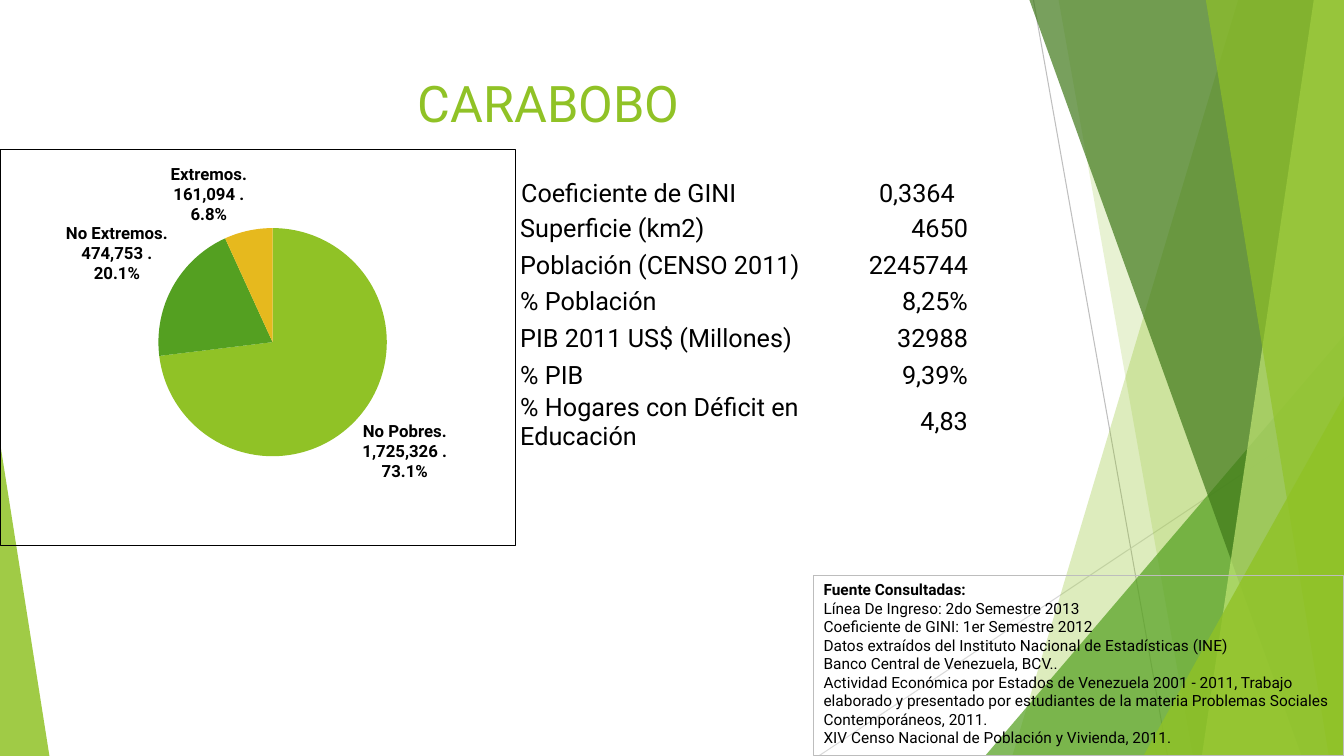
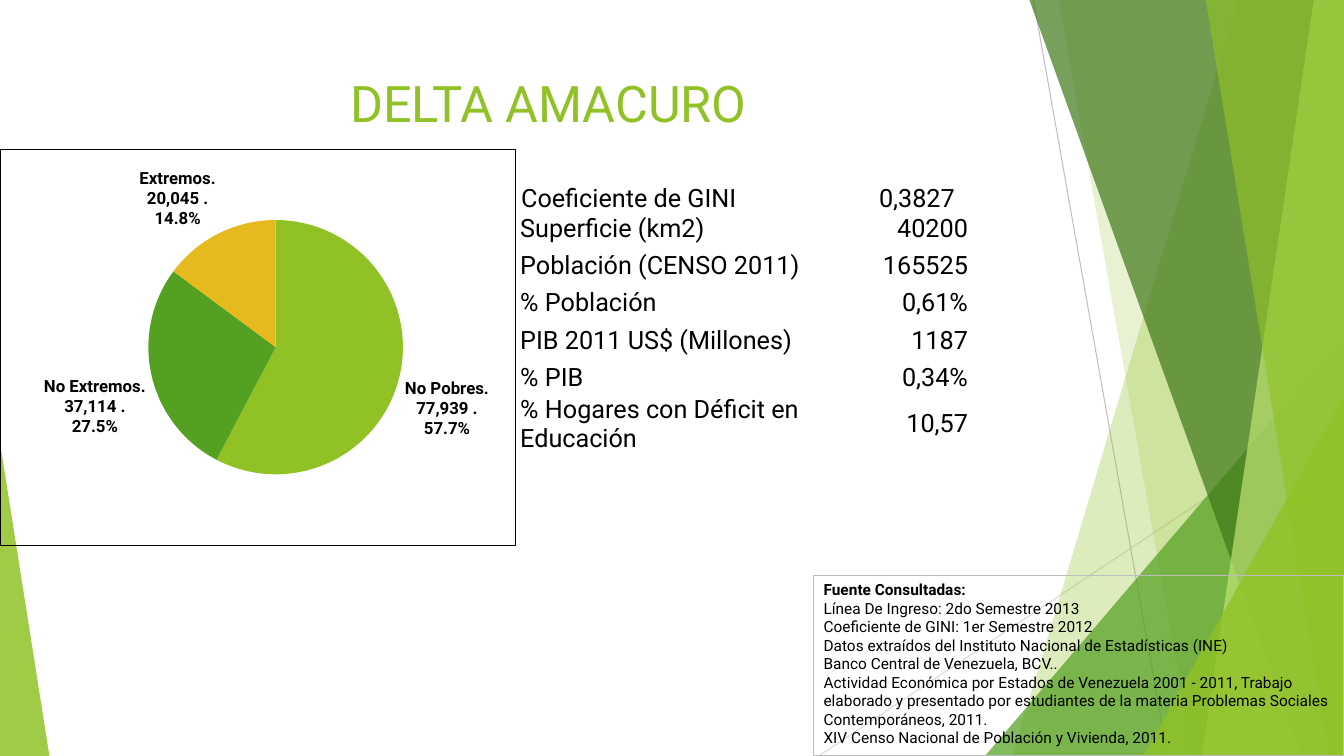
from pptx import Presentation
from pptx.chart.data import CategoryChartData
from pptx.dml.color import RGBColor
from pptx.enum.chart import XL_CHART_TYPE, XL_LABEL_POSITION
from pptx.enum.shapes import MSO_CONNECTOR, MSO_SHAPE
from pptx.enum.text import MSO_ANCHOR, PP_ALIGN
from pptx.oxml import parse_xml
from pptx.oxml.ns import nsdecls, qn
from pptx.util import Pt

EMU = 9144
WIDTH, HEIGHT = 1333, 750
FONT = "Roboto"
COLORS = {
    "lime": "90C226", "green": "54A021", "forest": "3F7819",
    "pale": "C0E474", "gold": "E6B91E", "black": "000000",
    "white": "FFFFFF", "gray": "BFBFBF", "silver": "D9D9D9",
    "frame": "BDBDBD",
}
CATEGORIES = ["No Pobres", "No Extremos", "Extremos"]
ROW_LABELS = [
    "Superficie (km2)", "Población (CENSO 2011)", "% Población",
    "PIB 2011 US$ (Millones)", "% PIB",
    "% Hogares con Déficit en Educación",
]
SOURCES = [
    "Fuente Consultadas:",
    "Línea De Ingreso: 2do Semestre 2013",
    "Coeficiente de GINI: 1er Semestre 2012",
    "Datos extraídos del Instituto Nacional de Estadísticas (INE)",
    "Banco Central de Venezuela, BCV..",
    "Actividad Económica por Estados de Venezuela 2001 - 2011, Trabajo "
    "elaborado y presentado por estudiantes de la materia Problemas "
    "Sociales Contemporáneos, 2011.",
    "XIV Censo Nacional de Población y Vivienda, 2011.",
]
LINES = [
    ((1025, 0), (1158, HEIGHT), "gray"),
    ((WIDTH, 403), (812, HEIGHT), "silver"),
]
FACETS = [
    ("band", (1228, 1004), "lime", 30),
    ("band", (1050, 1183), "lime", 20),
    ("triangle", (977, 333, 356, 417, 1), "green", 72),
    ("band", (1021, 1291), "forest", 70),
    ("band", (1303, 1192), "pale", 70),
    ("band", (1196, 1318), "lime", 65),
    ("triangle", (1134, 393, 199, 357, 1), "lime", 80),
    ("triangle", (0, 439, 49, 311, 0), "lime", 85),
]
STATES = [
    {"name": "CARABOBO", "gini": "0,3364", "gini_top": 171,
     "people": (1725326, 474753, 161094), "pie": (157, 78, 227),
     "tall_row": 42,
     "values": ["4650", "2245744", "8,25%", "32988", "9,39%", "4,83"]},
    {"name": "DELTA AMACURO", "gini": "0,3827", "gini_top": 176,
     "people": (77939, 37114, 20045), "pie": (147, 70, 253),
     "tall_row": 43,
     "values": ["40200", "165525", "0,61%", "1187", "0,34%", "10,57"]},
]


def rgb(name):
    return RGBColor.from_string(COLORS[name])


def px(*lengths):
    return [n * EMU for n in lengths]


class Deck:
    def __init__(self):
        self.prs = Presentation()
        self.prs.slide_width, self.prs.slide_height = px(WIDTH, HEIGHT)
        self.s = None

    def new_slide(self):
        self.s = self.prs.slides.add_slide(self.prs.slide_layouts[6])
        for start, end, color in LINES:
            self.line(start, end, color)
        for kind, geometry, color, opacity in FACETS:
            self.paint(getattr(self, kind)(*geometry), color, opacity)

    def line(self, start, end, color):
        cx = self.s.shapes.add_connector(MSO_CONNECTOR.STRAIGHT, *px(*start, *end))
        cx.line.color.rgb = rgb(color)
        cx.line.width = Pt(0.75)
        cx.element.spPr.append(parse_xml(f"<a:effectLst {nsdecls('a')}/>"))

    def band(self, top_x, bottom_x):
        fb = self.s.shapes.build_freeform(top_x, 0, scale=EMU)
        fb.add_line_segments([(WIDTH, 0), (WIDTH, HEIGHT), (bottom_x, HEIGHT)])
        return fb.convert_to_shape()

    def triangle(self, x, y, w, h, apex):
        sp = self.s.shapes.add_shape(MSO_SHAPE.ISOSCELES_TRIANGLE, *px(x, y, w, h))
        sp.adjustments[0] = apex
        return sp

    def paint(self, sp, color, opacity):
        sp.shadow.inherit = False
        sp.fill.solid()
        sp.fill.fore_color.rgb = rgb(color)
        sp.line.fill.background()
        clr = sp.element.spPr.find(".//" + qn("a:srgbClr"))
        clr.append(parse_xml(f'<a:alpha {nsdecls("a")} val="{opacity * 1000}"/>'))

    def style(self, p, size, color="black", bold=False, align=PP_ALIGN.LEFT):
        p.alignment = align
        for r in p.runs:
            self.font(r.font, size, color, bold)

    def font(self, font, size, color="black", bold=False):
        font.name = FONT
        font.size = Pt(size)
        font.bold = bold
        font.color.rgb = rgb(color)

    def text(self, box, text, size, color="black", align=PP_ALIGN.LEFT):
        tf = self.s.shapes.add_textbox(*px(*box)).text_frame
        tf.word_wrap = True
        tf.text = text
        self.style(tf.paragraphs[0], size, color, align=align)
        return tf.paragraphs[0]

    def title(self, text):
        self.text((74, 67, 940, 144), text, 36, "lime", PP_ALIGN.CENTER)

    def gini(self, value, top):
        p = self.text((507, top, 521, 40), f"Coeficiente de GINI\t{value}", 18)
        p._p.get_or_add_pPr().append(parse_xml(
            f'<a:tabLst {nsdecls("a")}><a:tab pos="{355 * EMU}" algn="l"/></a:tabLst>'))

    def pie(self, values, pie):
        w, h = 512, 394
        data = CategoryChartData(number_format="#,##0_)")
        data.categories = CATEGORIES
        data.add_series("Series 1", values)
        chart = self.s.shapes.add_chart(
            XL_CHART_TYPE.PIE, *px(0, 148, w, h), data).chart
        chart.has_legend = False
        chart.has_title = False
        self.font(chart.font, 10)
        series = chart.plots[0].series[0]
        for i, color in enumerate(("lime", "green", "gold")):
            fill = series.points[i].format.fill
            fill.solid()
            fill.fore_color.rgb = rgb(color)
        dl = series.data_labels
        dl.show_value = dl.show_percentage = dl.show_category_name = True
        dl.number_format = "0.0%"
        dl.number_format_is_linked = False
        dl.position = XL_LABEL_POSITION.OUTSIDE_END
        self.font(dl.font, 12, bold=True)
        root = chart.element
        root.find(".//" + qn("c:showBubbleSize")).addnext(
            parse_xml(f"<c:separator {nsdecls('c')}>. </c:separator>"))
        root.find(qn("c:chart")).addnext(parse_xml(
            f'<c:spPr {nsdecls("c", "a")}><a:noFill/><a:ln w="9525"><a:solidFill>'
            f'<a:srgbClr val="{COLORS["black"]}"/></a:solidFill></a:ln></c:spPr>'))
        left, top, size = pie
        parts = {"x": left / w, "y": top / h, "w": size / w, "h": size / h}
        modes = "".join(f'<c:{k}Mode val="edge"/>' for k in "xy")
        places = "".join(f'<c:{k} val="{v:.4f}"/>' for k, v in parts.items())
        area = root.find(".//" + qn("c:plotArea"))
        for old in area.findall(qn("c:layout")):
            area.remove(old)
        area.insert(0, parse_xml(
            f'<c:layout {nsdecls("c")}><c:manualLayout><c:layoutTarget val="inner"/>'
            f"{modes}{places}</c:manualLayout></c:layout>"))

    def table(self, values, tall_row):
        heights = [31, tall_row, 31, tall_row, 31, 61]
        widths = [283, 163]
        tb = self.s.shapes.add_table(
            len(values), 2, *px(515, 211, sum(widths), sum(heights))).table
        tb.first_row = tb.horz_banding = False
        for col, w in zip(tb.columns, widths):
            col.width = w * EMU
        for row, h, *texts in zip(tb.rows, heights, ROW_LABELS, values):
            row.height = h * EMU
            for cell, text, align in zip(
                    row.cells, texts, (PP_ALIGN.LEFT, PP_ALIGN.RIGHT)):
                self.cell(cell, text, align)

    def cell(self, cell, text, align):
        cell.text_frame.text = text
        self.style(cell.text_frame.paragraphs[0], 18, align=align)
        cell.vertical_anchor = MSO_ANCHOR.MIDDLE
        cell.margin_left = cell.margin_right = cell.margin_top = EMU
        cell.margin_bottom = 0
        cell.fill.background()
        tcPr = cell._tc.get_or_add_tcPr()
        for i, side in enumerate("LRTB"):
            tcPr.insert(i, parse_xml(
                f'<a:ln{side} {nsdecls("a")} w="12700"><a:solidFill>'
                f'<a:srgbClr val="{COLORS["white"]}"/></a:solidFill></a:ln{side}>'))

    def sources(self):
        sp = self.s.shapes.add_shape(MSO_SHAPE.RECTANGLE, *px(807, 571, 526, 179))
        sp.shadow.inherit = False
        sp.fill.background()
        sp.line.color.rgb = rgb("frame")
        sp.line.width = Pt(0.75)
        tf = sp.text_frame
        tf.word_wrap = True
        tf.vertical_anchor = MSO_ANCHOR.TOP
        tf.text = "\n".join(SOURCES)
        for i, p in enumerate(tf.paragraphs):
            self.style(p, 11, bold=i == 0)


def main():
    deck = Deck()
    for state in STATES:
        deck.new_slide()
        deck.title(state["name"])
        deck.gini(state["gini"], state["gini_top"])
        deck.pie(state["people"], state["pie"])
        deck.table(state["values"], state["tall_row"])
        deck.sources()
    deck.prs.save("out.pptx")


if __name__ == "__main__":
    main()
